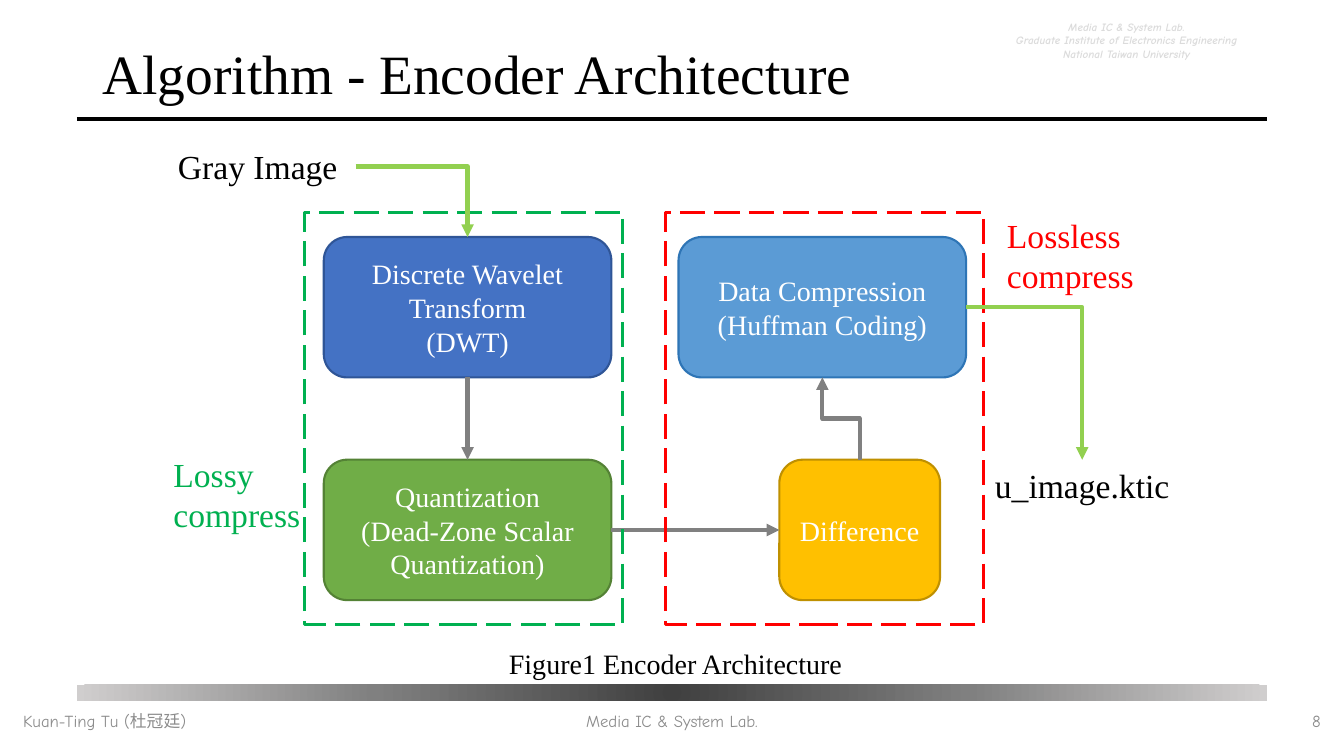
from dataclasses import dataclass

from pptx import Presentation
from pptx.dml.color import RGBColor
from pptx.enum.dml import MSO_LINE
from pptx.enum.shapes import MSO_CONNECTOR, MSO_SHAPE
from pptx.enum.text import MSO_ANCHOR, MSO_AUTO_SIZE, PP_ALIGN
from pptx.oxml import parse_xml
from pptx.oxml.ns import nsdecls, qn
from pptx.oxml.xmlchemy import OxmlElement
from pptx.util import Pt


@dataclass(frozen=True)
class Theme:
    """Fonts, type sizes and colours of the slide."""
    serif: str = "Times New Roman"
    comic: str = "Comic Neue"
    title: float = 39.6
    label: float = 24
    block: float = 20
    footer: float = 12
    lab: float = 8
    black: str = "000000"
    white: str = "FFFFFF"
    footer_gray: str = "8C8C8C"
    lab_gray: str = "DBDBDB"
    flow: str = "808080"
    in_out: str = "92D050"
    lossy: str = "00B050"
    lossless: str = "FF0000"
    dwt: tuple = ("4472C4", "2F5597")
    quantization: tuple = ("70AD47", "548235")
    difference: tuple = ("FFC000", "BF9000")
    huffman: tuple = ("5B9BD5", "2E75B6")
    bar: tuple = ("404040", "808080", "D0CECE")


T = Theme()
LEFT, CENTER, RIGHT = PP_ALIGN.LEFT, PP_ALIGN.CENTER, PP_ALIGN.RIGHT
TOP_SITE, LEFT_SITE, BOTTOM_SITE, RIGHT_SITE = range(4)


def rgb(value):
    """Turn a hex string into a colour."""
    return RGBColor.from_string(value)


def write(tf, lines, size, color, align=LEFT, font=T.serif):
    """Fill a text frame with one paragraph per line."""
    tf.text = "\n".join(lines)
    for p in tf.paragraphs:
        p.alignment = align
        p.font.name, p.font.size = font, Pt(size)
        p.font.color.rgb = rgb(color)


def add_label(s, box, lines, size, color, align=LEFT, font=T.serif,
              anchor=MSO_ANCHOR.TOP, wrap=True):
    """Add a text box."""
    tf = s.shapes.add_textbox(*map(Pt, box)).text_frame
    tf.word_wrap, tf.vertical_anchor = wrap, anchor
    write(tf, lines, size, color, align, font)
    return tf


def add_block(s, box, lines, colors):
    """Add a rounded processing block."""
    sp = s.shapes.add_shape(MSO_SHAPE.ROUNDED_RECTANGLE, *map(Pt, box))
    sp.shadow.inherit = False
    sp.fill.solid()
    sp.fill.fore_color.rgb, sp.line.color.rgb = map(rgb, colors)
    sp.line.width = Pt(1.5)
    sp.text_frame.vertical_anchor = MSO_ANCHOR.MIDDLE
    write(sp.text_frame, lines, T.block, T.white, CENTER)
    return sp


def add_frame(s, left, color):
    """Add a dashed frame around one stage."""
    sp = s.shapes.add_shape(MSO_SHAPE.RECTANGLE, *map(Pt, (left, 151.5, 227.5, 294.5)))
    sp.shadow.inherit = False
    sp.fill.background()
    sp.line.color.rgb = rgb(color)
    sp.line.width = Pt(2.25)
    sp.line.dash_style = MSO_LINE.LONG_DASH


def add_line(s, begin, end, color, kind=MSO_CONNECTOR.STRAIGHT, arrow=True):
    """Add a connector, with an arrowhead unless told otherwise."""
    c = s.shapes.add_connector(kind, *map(Pt, begin + end))
    c.line.color.rgb = rgb(color)
    c.line.width = Pt(3)
    if arrow:
        tail = OxmlElement("a:tailEnd")
        tail.set("type", "triangle")
        c.line._get_or_add_ln().append(tail)
    c._element.spPr.append(OxmlElement("a:effectLst"))
    return c


def add_corner(s, begin, end):
    """Add an arrow that runs across and then down."""
    c = add_line(s, begin, end, T.in_out, MSO_CONNECTOR.ELBOW)
    c._element.spPr.find(qn("a:prstGeom")).set("prst", "bentConnector2")


def add_step_up(s, begin, end):
    """Add an arrow that runs up, left and up again."""
    (x1, y1), (x2, y2) = begin, end
    cx, cy = (x1 + x2) / 2, (y1 + y2) / 2
    dx, dy = (y1 - y2) / 2, (x1 - x2) / 2
    c = add_line(s, (cx - dx, cy + dy), (cx + dx, cy - dy), T.flow, MSO_CONNECTOR.ELBOW)
    c._element.spPr.find(qn("a:xfrm")).set("rot", str(270 * 60000))


def add_link(s, source, source_site, target, target_site):
    """Join two blocks with a straight arrow."""
    c = add_line(s, (0, 0), (0, 0), T.flow)
    c.begin_connect(source, source_site)
    c.end_connect(target, target_site)


def add_gradient_bar(s):
    """Add the bar above the footer, dark in its centre."""
    sp = s.shapes.add_shape(MSO_SHAPE.RECTANGLE, *map(Pt, (55, 489, 850, 11.5)))
    sp.shadow.inherit = False
    sp.line.fill.background()
    sp.fill.gradient()
    stops = "".join(f'<a:gs pos="{i * 50000}"><a:srgbClr val="{color}"/></a:gs>'
                    for i, color in enumerate(T.bar))
    center = 'l="50000" t="50000" r="50000" b="50000"'
    grad = parse_xml(f'<a:gradFill {nsdecls("a")}><a:gsLst>{stops}</a:gsLst>'
                     f'<a:path path="circle"><a:fillToRect {center}/></a:path></a:gradFill>')
    sp_pr = sp._element.spPr
    sp_pr.replace(sp_pr.find(qn("a:gradFill")), grad)


def add_title(s, text):
    """Place and format the title placeholder."""
    sp = s.shapes.title
    sp.left, sp.top, sp.width, sp.height = map(Pt, (66, 29, 828, 52))
    tf = sp.text_frame
    tf.auto_size, tf.vertical_anchor = MSO_AUTO_SIZE.NONE, MSO_ANCHOR.MIDDLE
    write(tf, [text], T.title, T.black)
    tf.paragraphs[0].line_spacing = 0.9


def add_furniture(s):
    """Add the rule, lab name and footer."""
    add_gradient_bar(s)
    add_line(s, (55, 85), (905, 85), T.black, arrow=False)
    lab = "Media IC & System Lab."
    tf = add_label(s, (708, 10.8, 193.7, 36),
                   [lab, "Graduate Institute of Electronics Engineering",
                    "National Taiwan University"], T.lab, T.lab_gray, CENTER, T.comic)
    for p in tf.paragraphs:
        p.font.bold = p.font.italic = True
    for left, width, text, align in ((9.4, 198, "Kuan-Ting Tu (杜冠廷)", LEFT),
                                     (372, 216, lab, CENTER),
                                     (752.4, 198, "8", RIGHT)):
        add_label(s, (left, 500.4, width, 28.8), [text], T.footer, T.footer_gray,
                  align, T.comic, MSO_ANCHOR.MIDDLE)


def add_encoder(s):
    """Draw the encoder diagram."""
    left, right, upper, lower = 231.3, 484.7, 169.3, 328.4
    width, height = 205.4, 100.3
    dwt = add_block(s, (left, upper, width, height),
                    ["Discrete Wavelet Transform", "(DWT)"], T.dwt)
    quantization = add_block(s, (left, lower, width, height),
                             ["Quantization", "(Dead-Zone Scalar Quantization)"],
                             T.quantization)
    difference = add_block(s, (556.7, lower, 114.8, height), ["Difference"], T.difference)
    add_block(s, (right, upper, width, height),
              ["Data Compression", "(Huffman Coding)"], T.huffman)

    add_link(s, dwt, BOTTOM_SITE, quantization, TOP_SITE)
    add_link(s, quantization, RIGHT_SITE, difference, LEFT_SITE)
    add_step_up(s, (556.7 + 114.8 / 2, lower), (right + width / 2, upper + height))
    add_frame(s, 217.5, T.lossy)
    add_frame(s, 475.2, T.lossless)
    add_corner(s, (right + width, upper + height / 2), (773, lower))
    add_corner(s, (254, 119), (left + width / 2, upper))

    add_label(s, (120, 101, 134, 36), ["Gray Image"], T.label, T.black)
    add_label(s, (702.8, 328.4, 140.4, 36), ["u_image.ktic"], T.label, T.black, CENTER)
    add_label(s, (116.8, 320.6, 106, 65.5), ["Lossy", "compress"], T.label, T.lossy)
    add_label(s, (712.2, 149.6, 116, 65.5), ["Lossless", "compress"], T.label, T.lossless)
    add_label(s, (356.4, 458, 254, 31.5), ["Figure1 Encoder Architecture"],
              T.block, T.black, wrap=False)


def main():
    """Build and save the slide."""
    prs = Presentation()
    prs.slide_width, prs.slide_height = Pt(960), Pt(540)
    s = prs.slides.add_slide(prs.slide_layouts[5])
    add_furniture(s)
    add_title(s, "Algorithm - Encoder Architecture")
    add_encoder(s)
    prs.save("out.pptx")


if __name__ == "__main__":
    main()
